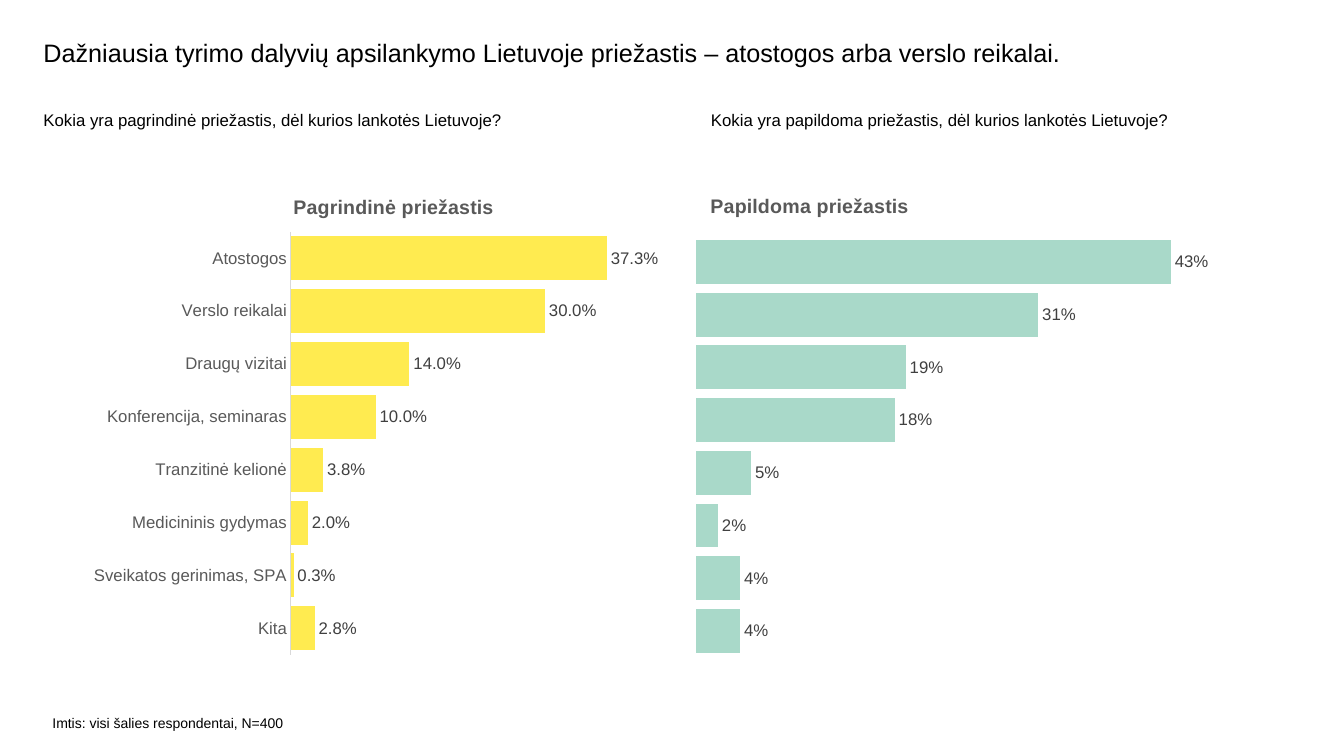
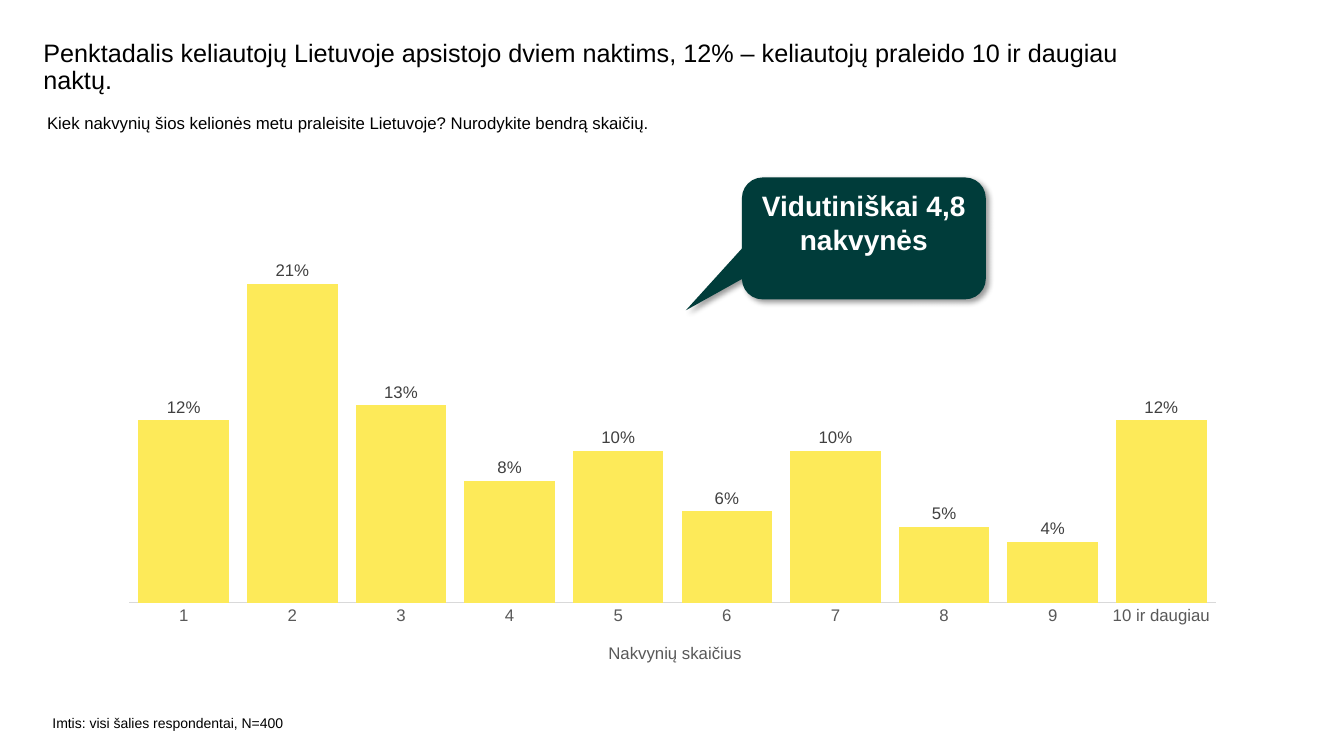
import pptx
import pptx.util
import pptx.chart.data
import pptx.dml.color
import pptx.enum.chart
import pptx.enum.shapes
import pptx.enum.text
import pptx.oxml
import pptx.oxml.ns

COLORS = {
    "text": "000000",
    "axis_text": "595959",
    "label": "404040",
    "axis_line": "D9D9D9",
    "yellow": "FFEB50",
    "soft_yellow": "FDEA59",
    "mint": "A9D9C9",
    "callout": "003C3A",
    "white": "FFFFFF",
}
FONT = "Arial"
WIDTH, HEIGHT = pptx.util.Inches(13.33), pptx.util.Inches(7.5)
COLUMN, ROW = WIDTH / 100, HEIGHT / 100
SAMPLE = "Imtis: visi šalies respondentai, N=400"


def place(box):
    """Turn a box of columns and rows on the 100 by 100 grid into lengths."""
    return [round(size * unit) for size, unit in zip(box, (COLUMN, ROW) * 2)]


def color(name):
    """Return the named colour."""
    return pptx.dml.color.RGBColor.from_string(COLORS[name])


def style_font(font, size, name, bold=False):
    """Set typeface, size, colour and weight of a font."""
    font.name = FONT
    font.size = pptx.util.Pt(size)
    font.bold = bold
    font.color.rgb = color(name)


def add_text(page, box, text, size, spacing=None):
    """Add a wrapped text box without margins."""
    frame = page.shapes.add_textbox(*place(box)).text_frame
    frame.word_wrap = True
    frame.margin_left = frame.margin_right = 0
    frame.margin_top = frame.margin_bottom = 0
    frame.text = text
    para = frame.paragraphs[0]
    para.line_spacing = spacing
    style_font(para.runs[0].font, size, "text")


def add_page(deck, title, questions):
    """Add a page with its title, survey questions and sample footer."""
    page = deck.slides.add_slide(deck.slide_layouts[6])
    add_text(page, (3.23, 5.33, 84.4, 8), title, 18, 0.9)
    for left, top, question in questions:
        add_text(page, (left, top, 46, 8), question, 12)
    add_text(page, (3.9, 94.53, 19, 3.2), SAMPLE, 10)
    return page


def set_layout(parent, index, shares, inner=False):
    """Place a chart part by percentages of the chart."""
    for old in parent.findall(pptx.oxml.ns.qn("c:layout")):
        parent.remove(old)
    names = ("x", "y", "w", "h")[:len(shares)]
    target = '<c:layoutTarget val="inner"/>' if inner else ""
    modes = "".join(f'<c:{name}Mode val="edge"/>' for name in names[:2])
    sizes = "".join(f'<c:{name} val="{share / 100:.4f}"/>' for name, share in zip(names, shares))
    parent.insert(index, pptx.oxml.parse_xml(
        f'<c:layout {pptx.oxml.ns.nsdecls("c")}><c:manualLayout>'
        f'{target}{modes}{sizes}</c:manualLayout></c:layout>'))


def set_title(title, text, position, size, bold=False):
    """Write and place a chart or axis title."""
    title.text_frame.text = text
    style_font(title.text_frame.paragraphs[0].runs[0].font, size, "axis_text", bold)
    set_layout(title._element, 1, position)


def add_bars(page, box, kind, categories, values, fill, plot, top_value,
             number_format="0%", show_categories=True):
    """Add a one-series bar chart with value labels and return it."""
    data = pptx.chart.data.CategoryChartData(number_format=number_format)
    data.categories = categories
    data.add_series("Series 1", values)
    chart = page.shapes.add_chart(kind, *place(box), data).chart
    style_font(chart.font, 12, "text")
    chart.has_legend = chart.has_title = False

    value_axis = chart.value_axis
    value_axis.has_major_gridlines = value_axis.visible = False
    value_axis.minimum_scale, value_axis.maximum_scale = 0, top_value
    axis = chart.category_axis
    axis.visible = show_categories
    axis.major_tick_mark = pptx.enum.chart.XL_TICK_MARK.NONE
    style_font(axis.tick_labels.font, 12, "axis_text")
    axis.format.line.color.rgb = color("axis_line")
    axis.format.line.width = pptx.util.Pt(0.75)

    bars = chart.plots[0]
    bars.gap_width = 20
    bars.vary_by_categories = False
    series = bars.series[0]
    series.format.fill.solid()
    series.format.fill.fore_color.rgb = color(fill)
    bars.has_data_labels = True
    labels = bars.data_labels
    labels.show_value = True
    labels.number_format, labels.number_format_is_linked = number_format, False
    labels.position = pptx.enum.chart.XL_LABEL_POSITION.OUTSIDE_END
    style_font(labels.font, 12, "label")
    set_layout(chart._chartSpace.chart.plotArea, 0, plot, inner=True)
    return chart


def add_callout(page, box, text):
    """Add a speech bubble with a soft shadow."""
    bubble = page.shapes.add_shape(
        pptx.enum.shapes.MSO_SHAPE.ROUNDED_RECTANGULAR_CALLOUT, *place(box))
    for index, value in enumerate((-0.73, 0.59, 0.17)):
        bubble.adjustments[index] = value
    bubble.fill.solid()
    bubble.fill.fore_color.rgb = color("callout")
    bubble.line.fill.background()
    bubble.shadow.inherit = False
    effects = bubble._element.spPr.find(pptx.oxml.ns.qn("a:effectLst"))
    effects.append(pptx.oxml.parse_xml(
        f'<a:outerShdw {pptx.oxml.ns.nsdecls("a")} blurRad="{pptx.util.Pt(4)}" '
        f'dist="{pptx.util.Pt(3)}" dir="2700000" algn="tl" rotWithShape="0">'
        f'<a:srgbClr val="{COLORS["text"]}"><a:alpha val="40000"/></a:srgbClr></a:outerShdw>'))
    frame = bubble.text_frame
    frame.word_wrap = True
    frame.vertical_anchor = pptx.enum.text.MSO_ANCHOR.TOP
    frame.text = text
    para = frame.paragraphs[0]
    para.alignment = pptx.enum.text.PP_ALIGN.CENTER
    style_font(para.runs[0].font, 20, "white", bold=True)


def add_reasons_page(deck):
    """Build the page on main and additional reasons for the visit."""
    page = add_page(
        deck,
        "Dažniausia tyrimo dalyvių apsilankymo Lietuvoje priežastis – atostogos arba verslo reikalai.",
        [(3.23, 14.53, "Kokia yra pagrindinė priežastis, dėl kurios lankotės Lietuvoje?"),
         (52.9, 14.53, "Kokia yra papildoma priežastis, dėl kurios lankotės Lietuvoje?")])
    kind = pptx.enum.chart.XL_CHART_TYPE.BAR_CLUSTERED
    reasons = ["Kita", "Sveikatos gerinimas, SPA", "Medicininis gydymas", "Tranzitinė kelionė",
               "Konferencija, seminaras", "Draugų vizitai", "Verslo reikalai", "Atostogos"]
    main_reason = add_bars(
        page, (5.7, 24.53, 43.29, 64.8), kind, reasons,
        [0.028, 0.003, 0.02, 0.038, 0.1, 0.14, 0.3, 0.373],
        "yellow", (36.9, 9.5, 58.3, 86.3), 0.4, "0.0%")
    set_title(main_reason.chart_title, "Pagrindinė priežastis", (36.7, 1.1), 14, bold=True)
    extra_reason = add_bars(
        page, (51, 23.33, 38.93, 64.8), kind, [str(number) for number in range(1, 9)],
        [0.04, 0.04, 0.02, 0.05, 0.18, 0.19, 0.31, 0.43],
        "mint", (2, 12.1, 95, 86.1), 0.45, show_categories=False)
    set_title(extra_reason.chart_title, "Papildoma priežastis", (4.1, 2.8), 14, bold=True)


def add_nights_page(deck):
    """Build the page on the number of nights stayed."""
    page = add_page(
        deck,
        "Penktadalis keliautojų Lietuvoje apsistojo dviem naktims, "
        "12% – keliautojų praleido 10 ir daugiau naktų.",
        [(3.5, 14.93, "Kiek nakvynių šios kelionės metu praleisite Lietuvoje? Nurodykite bendrą skaičių.")])
    nights = add_bars(
        page, (7.95, 27.73, 84.1, 62.13), pptx.enum.chart.XL_CHART_TYPE.COLUMN_CLUSTERED,
        [str(number) for number in range(1, 10)] + ["10 ir daugiau"],
        [0.12, 0.21, 0.13, 0.08, 0.1, 0.06, 0.1, 0.05, 0.04, 0.12],
        "soft_yellow", (2, 2.8, 96.1, 80.9), 0.25)
    nights.plots[0].overlap = -27
    set_title(nights.category_axis.axis_title, "Nakvynių skaičius", (44.1, 91.6), 12)
    add_callout(page, (55.2, 23.47, 18.15, 16.13), "Vidutiniškai 4,8 nakvynės")


def main():
    """Build and save the deck."""
    deck = pptx.Presentation()
    deck.slide_width, deck.slide_height = WIDTH, HEIGHT
    add_reasons_page(deck)
    add_nights_page(deck)
    deck.save("out.pptx")


if __name__ == "__main__":
    main()
